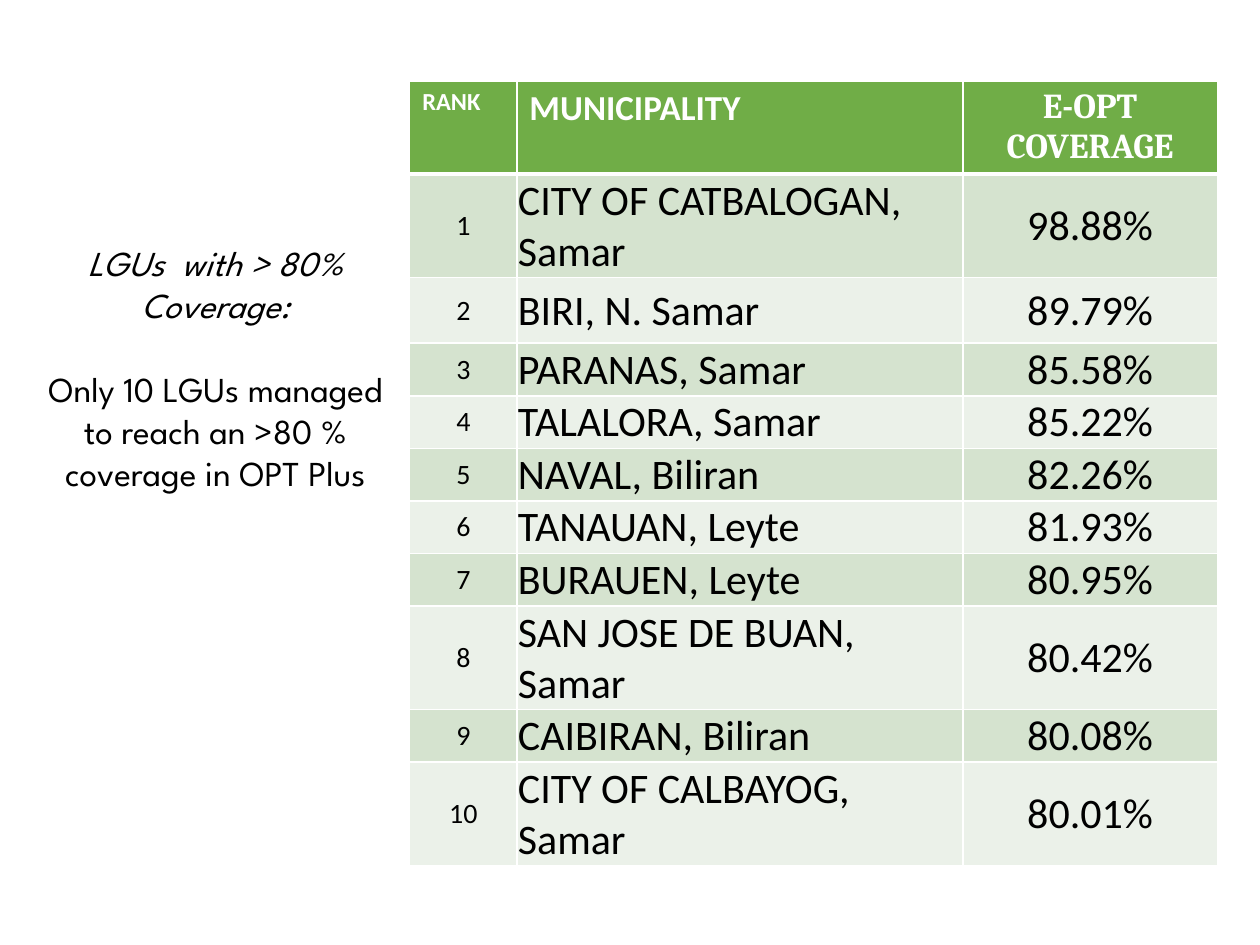
from lxml.etree import SubElement
from pptx import Presentation
from pptx.dml.color import RGBColor
from pptx.enum.shapes import MSO_SHAPE
from pptx.enum.text import MSO_ANCHOR, PP_ALIGN
from pptx.oxml.ns import qn
from pptx.util import Cm, Pt

WHITE = RGBColor(0xFF, 0xFF, 0xFF)
BLACK = RGBColor(0, 0, 0)
GREEN = RGBColor(0x70, 0xAD, 0x47)
BANDS = (RGBColor(0xD5, 0xE3, 0xCF), RGBColor(0xEB, 0xF1, 0xE9))

COLUMN_WIDTHS = (2.16, 8.99, 5.13)
HEADER_HEIGHT = 1.85
# Heading, size, font and alignment of each column
HEADERS = (
    ("RANK", 14, "Calibri", PP_ALIGN.LEFT),
    ("MUNICIPALITY", 20, "Calibri", PP_ALIGN.LEFT),
    ("E-OPT COVERAGE", 20, "Cambria", PP_ALIGN.CENTER),
)
# Municipality, coverage and row height, in order of rank
RANKING = (
    ("CITY OF CATBALOGAN, Samar", "98.88%", 2.08),
    ("BIRI, N. Samar", "89.79%", 1.32),
    ("PARANAS, Samar", "85.58%", 1.06),
    ("TALALORA, Samar", "85.22%", 1.06),
    ("NAVAL, Biliran", "82.26%", 1.06),
    ("TANAUAN, Leyte", "81.93%", 1.06),
    ("BURAUEN, Leyte", "80.95%", 1.06),
    ("SAN JOSE DE BUAN, Samar", "80.42%", 2.08),
    ("CAIBIRAN, Biliran", "80.08%", 1.06),
    ("CITY OF CALBAYOG, Samar", "80.01%", 2.08),
)


def add_run(paragraph, text, size, font, color, bold=False, italic=False):
    run = paragraph.add_run()
    run.text = text
    run.font.size = Pt(size)
    run.font.name = font
    run.font.color.rgb = color
    run.font.bold = bold
    run.font.italic = italic


def set_borders(cell, bottom_width):
    properties = cell._tc.get_or_add_tcPr()
    for side, width in (("L", 1), ("R", 1), ("T", 1), ("B", bottom_width)):
        line = SubElement(properties, qn(f"a:ln{side}"), w=str(Pt(width)))
        fill = SubElement(line, qn("a:solidFill"))
        SubElement(fill, qn("a:srgbClr"), val=str(WHITE))


def fill_cell(cell, text, size, font, color, fill, alignment, bold=False, bottom_width=1):
    set_borders(cell, bottom_width)
    cell.fill.solid()
    cell.fill.fore_color.rgb = fill
    paragraph = cell.text_frame.paragraphs[0]
    paragraph.alignment = alignment
    add_run(paragraph, text, size, font, color, bold)


def add_message(slide):
    shape = slide.shapes.add_shape(MSO_SHAPE.RECTANGLE, Cm(0.51), Cm(3.38), Cm(7.67), Cm(8.05))
    shape.shadow.inherit = False
    shape.fill.solid()
    shape.fill.fore_color.rgb = WHITE
    shape.line.fill.background()
    frame = shape.text_frame
    frame.word_wrap = True
    frame.vertical_anchor = MSO_ANCHOR.MIDDLE
    heading, message = frame.paragraphs[0], frame.add_paragraph()
    heading.alignment = message.alignment = PP_ALIGN.CENTER
    message.space_before = Pt(24)
    add_run(heading, "LGUs  with > 80% Coverage:", 20, "League Spartan", BLACK, italic=True)
    add_run(message, "Only 10 LGUs managed to reach an >80 % coverage in OPT Plus",
            20, "League Spartan", BLACK)


def add_ranking(slide):
    heights = [HEADER_HEIGHT] + [height for _, _, height in RANKING]
    table = slide.shapes.add_table(
        len(heights), len(COLUMN_WIDTHS), Cm(8.26), Cm(1.63),
        Cm(sum(COLUMN_WIDTHS)), Cm(sum(heights))).table
    for column, width in zip(table.columns, COLUMN_WIDTHS):
        column.width = Cm(width)
    for row, height in zip(table.rows, heights):
        row.height = Cm(height)

    # Header row
    for column, (text, size, font, alignment) in enumerate(HEADERS):
        fill_cell(table.cell(0, column), text, size, font, WHITE, GREEN, alignment,
                  bold=True, bottom_width=3)

    # Ranked rows in alternating bands
    for rank, (municipality, coverage, _) in enumerate(RANKING, start=1):
        values = (
            (str(rank), 16, PP_ALIGN.CENTER),
            (municipality, 24, PP_ALIGN.LEFT),
            (coverage, 24, PP_ALIGN.CENTER),
        )
        for column, (text, size, alignment) in enumerate(values):
            cell = table.cell(rank, column)
            cell.vertical_anchor = MSO_ANCHOR.MIDDLE
            if column > 0:
                cell.margin_left = cell.margin_right = cell.margin_top = Cm(0.02)
                cell.margin_bottom = Cm(0)
            # The first band row keeps the thick rule under the header
            fill_cell(cell, text, size, "Calibri", BLACK, BANDS[(rank - 1) % 2], alignment)
            if rank == 1:
                cell._tc.tcPr.find(qn("a:lnT")).set("w", str(Pt(3)))


def main():
    presentation = Presentation()
    presentation.slide_width = Cm(25.4)
    presentation.slide_height = Cm(19.05)
    slide = presentation.slides.add_slide(presentation.slide_layouts[6])
    add_message(slide)
    add_ranking(slide)
    presentation.save("out.pptx")


if __name__ == "__main__":
    main()
